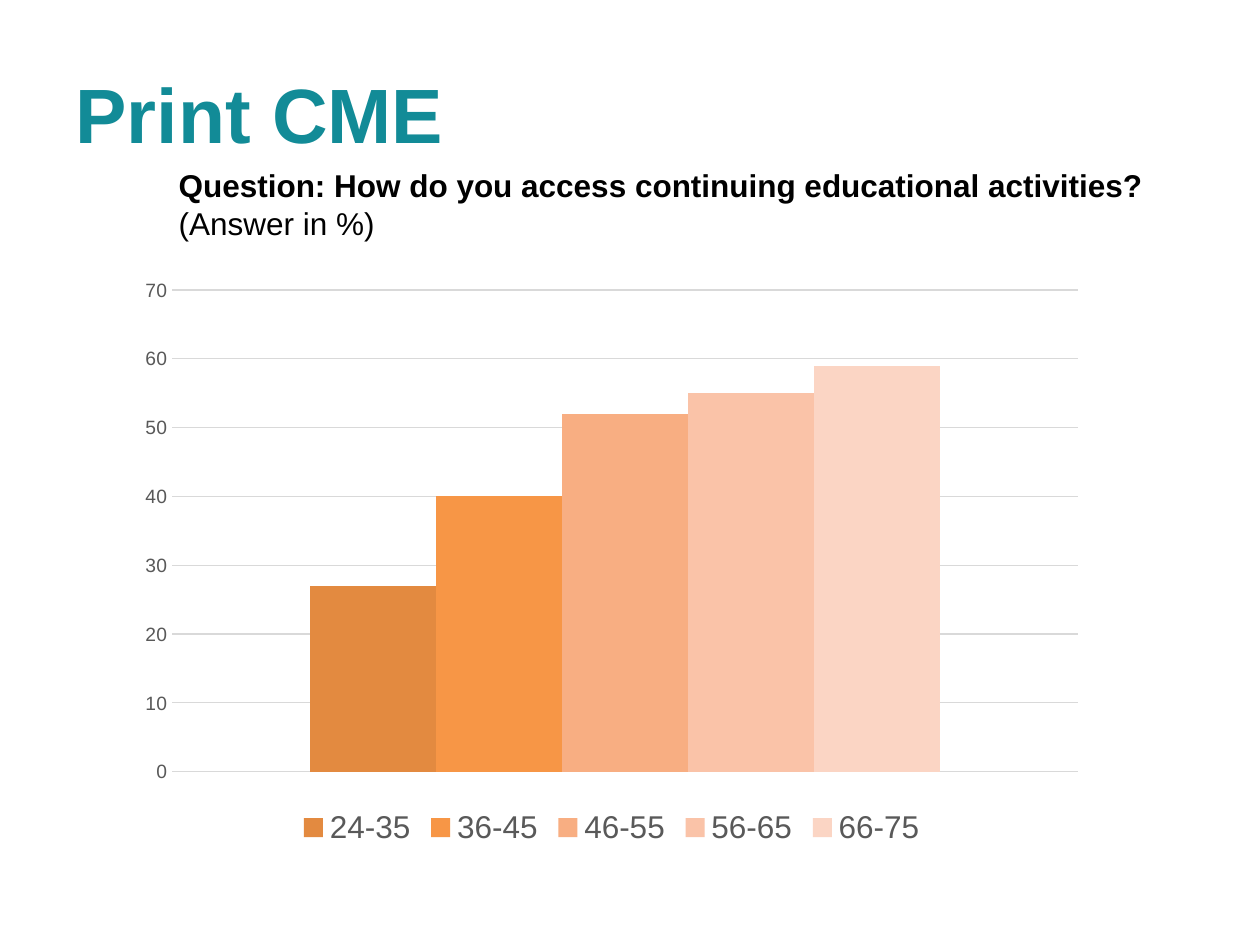
"""Build the Print CME slide with its age-group column chart."""
import dataclasses

import pptx
import pptx.chart.data
import pptx.dml.color
import pptx.enum.chart
import pptx.enum.text
import pptx.util

Inches = pptx.util.Inches


@dataclasses.dataclass(frozen=True)
class Theme:
    font: str = "Arial"
    title_color: str = "128B97"
    text_color: str = "000000"
    label_color: str = "595959"
    grid_color: str = "D9D9D9"
    title_size: int = 44
    body_size: int = 18
    axis_size: int = 11
    chart_size: int = 10
    grid_width: float = 0.75


AGE_GROUPS = [
    ("24-35", 27, "E38A40"),
    ("36-45", 40, "F79646"),
    ("46-55", 52, "F8AE82"),
    ("56-65", 55, "FAC3A8"),
    ("66-75", 59, "FBD5C4"),
]


class SlideBuilder:
    def __init__(self, deck, theme):
        self.theme = theme
        self.page = deck.slides.add_slide(deck.slide_layouts[5])

    def style(self, font, size, color, bold=False):
        font.name = self.theme.font
        font.size = pptx.util.Pt(size)
        font.bold = bold
        font.color.rgb = pptx.dml.color.RGBColor.from_string(color)

    def title(self, text, left, top, width, height):
        box = self.page.shapes.title
        box.left, box.top = Inches(left), Inches(top)
        box.width, box.height = Inches(width), Inches(height)
        frame = box.text_frame
        frame.text = text
        frame.vertical_anchor = pptx.enum.text.MSO_ANCHOR.MIDDLE
        para = frame.paragraphs[0]
        para.alignment = pptx.enum.text.PP_ALIGN.LEFT
        self.style(para.runs[0].font, self.theme.title_size, self.theme.title_color, True)

    def text(self, spans, left, top, width, height):
        box = self.page.shapes.add_textbox(
            Inches(left), Inches(top), Inches(width), Inches(height))
        frame = box.text_frame
        frame.word_wrap = True
        frame.auto_size = pptx.enum.text.MSO_AUTO_SIZE.SHAPE_TO_FIT_TEXT
        for text, bold in spans:
            span = frame.paragraphs[0].add_run()
            span.text = text
            self.style(span.font, self.theme.body_size, self.theme.text_color, bold)

    def column_chart(self, category, groups, left, top, width, height):
        theme = self.theme
        data = pptx.chart.data.CategoryChartData()
        data.categories = [category]
        for name, value, _ in groups:
            data.add_series(name, [value])
        chart = self.page.shapes.add_chart(
            pptx.enum.chart.XL_CHART_TYPE.COLUMN_CLUSTERED,
            Inches(left), Inches(top), Inches(width), Inches(height), data).chart
        chart.has_title = False
        self.style(chart.font, theme.chart_size, theme.text_color)

        plot = chart.plots[0]
        plot.gap_width = 219
        plot.overlap = 0
        plot.vary_by_categories = False
        for series, (_, _, color) in zip(plot.series, groups):
            series.format.fill.solid()
            series.format.fill.fore_color.rgb = pptx.dml.color.RGBColor.from_string(color)

        chart.category_axis.visible = False
        axis = chart.value_axis
        axis.minimum_scale, axis.maximum_scale, axis.major_unit = 0, 70, 10
        axis.major_tick_mark = pptx.enum.chart.XL_TICK_MARK.NONE
        axis.format.line.fill.background()
        self.style(axis.tick_labels.font, theme.axis_size, theme.label_color)
        grid = axis.major_gridlines.format.line
        grid.color.rgb = pptx.dml.color.RGBColor.from_string(theme.grid_color)
        grid.width = pptx.util.Pt(theme.grid_width)

        chart.has_legend = True
        chart.legend.position = pptx.enum.chart.XL_LEGEND_POSITION.BOTTOM
        chart.legend.include_in_layout = False
        self.style(chart.legend.font, theme.body_size, theme.label_color)


def main():
    deck = pptx.Presentation()
    deck.slide_width, deck.slide_height = Inches(10), Inches(7.5)
    builder = SlideBuilder(deck, Theme())
    builder.title("Print CME", 0.5, 0.27, 9, 1.25)
    builder.column_chart("1", AGE_GROUPS, 1, 2.12, 7.71, 4.64)
    builder.text(
        [("Question: How do you access continuing educational activities? ", True),
         ("(Answer in %)", False)],
        1.32, 1.27, 7.86, 0.73)
    deck.save("out.pptx")


if __name__ == "__main__":
    main()
